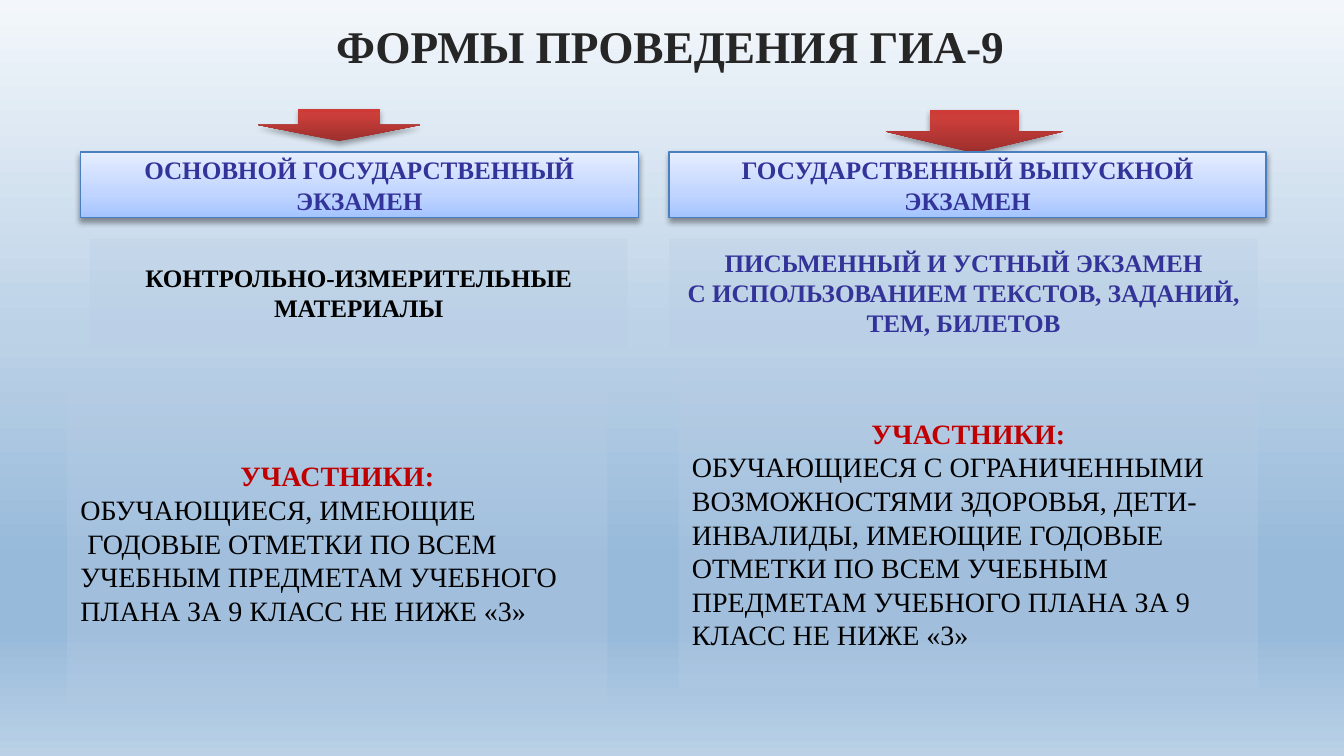
"""Build the slide on the forms of the GIA-9 exam."""
from pptx import Presentation
from pptx import util as u
from pptx.dml.color import RGBColor
from pptx.enum import shapes, text
from pptx.oxml import parse_xml
from pptx.oxml.ns import nsdecls, qn

FONT = "Times New Roman"
INK = RGBColor(0x26, 0x26, 0x26)
BLACK = RGBColor(0, 0, 0)
NAVY = RGBColor(0x33, 0x33, 0x99)
RED = RGBColor(0xC0, 0, 0)
EDGE = RGBColor(0x4B, 0x7E, 0xBC)
PANEL = RGBColor(0xB9, 0xCD, 0xE5)
SKY = [(0, RGBColor(0xF3, 0xF7, 0xFB)), (44, RGBColor(0xBC, 0xD2, 0xE7)),
       (74, RGBColor(0x97, 0xBA, 0xDA)), (83, RGBColor(0x97, 0xBA, 0xDA)),
       (100, RGBColor(0xBA, 0xD1, 0xE6))]
ARROW = [(0, RGBColor(0x9C, 0x2F, 0x2D)), (80, RGBColor(0xCB, 0x3E, 0x3A)),
         (100, RGBColor(0xCE, 0x3B, 0x37))]
HEADER = [(0, RGBColor(0xA4, 0xC4, 0xFF)), (35, RGBColor(0xBF, 0xD4, 0xFF)),
          (100, RGBColor(0xE6, 0xEE, 0xFF))]
CENTER, LEFT = text.PP_ALIGN.CENTER, text.PP_ALIGN.LEFT


def set_gradient(fill, element, stops, angle):
    fill.gradient()
    fill.gradient_angle = angle
    gs_list = element.find(".//" + qn("a:gsLst"))
    for gs in list(gs_list):
        gs_list.remove(gs)
    for pos, color in stops:
        gs_list.append(parse_xml(
            f'<a:gs {nsdecls("a")} pos="{pos * 1000}"><a:srgbClr val="{color}"/></a:gs>'))


def add_shadow(sp, alpha, dist):
    sp._element.spPr.find(qn("a:effectLst")).append(parse_xml(
        f'<a:outerShdw {nsdecls("a")} blurRad="{u.Pt(3.1)}" dist="{u.Pt(dist)}" '
        f'dir="5400000" rotWithShape="0"><a:srgbClr val="{BLACK}">'
        f'<a:alpha val="{alpha * 1000}"/></a:srgbClr></a:outerShdw>'))


def add_base(s, kind, box):
    sp = s.shapes.add_shape(kind, *map(u.Pt, box))
    sp.shadow.inherit = False
    sp.line.fill.background()
    return sp


def prepare_frame(sp):
    tf = sp.text_frame
    tf.word_wrap = True
    tf.vertical_anchor = text.MSO_ANCHOR.MIDDLE
    return tf


def add_line(tf, words, size=13.5, color=NAVY, bold=True, align=CENTER):
    p = tf.paragraphs[0]
    if p.runs:
        p = tf.add_paragraph()
    p.alignment = align
    r = p.add_run()
    r.text = words
    r.font.name, r.font.size, r.font.bold = FONT, u.Pt(size), bold
    r.font.color.rgb = color
    return p


def add_title(s, words):
    tf = prepare_frame(s.shapes.add_textbox(*map(u.Pt, (168, 8.6, 486, 34.6))))
    tf.margin_left = u.Pt(12)
    add_line(tf, words, size=24.3, color=INK, align=LEFT).line_spacing = 0.9


def add_arrow(s, box):
    sp = add_base(s, shapes.MSO_SHAPE.DOWN_ARROW, box)
    set_gradient(sp.fill, sp._element, ARROW, 90)
    add_shadow(sp, alpha=35, dist=1.8)


def add_header(s, box, words):
    sp = add_base(s, shapes.MSO_SHAPE.RECTANGLE, box)
    set_gradient(sp.fill, sp._element, HEADER, 90)
    sp.line.color.rgb = EDGE
    sp.line.width = u.Pt(0.75)
    add_shadow(sp, alpha=38, dist=1.6)
    add_line(prepare_frame(sp), words)


def add_panel(s, box):
    sp = add_base(s, shapes.MSO_SHAPE.RECTANGLE, box)
    sp.fill.solid()
    sp.fill.fore_color.rgb = PANEL
    sp._element.spPr.find(".//" + qn("a:srgbClr")).append(
        parse_xml(f'<a:alpha {nsdecls("a")} val="31000"/>'))
    return prepare_frame(sp)


def add_materials(s, box, lines, color):
    tf = add_panel(s, box)
    for words in lines:
        add_line(tf, words, color=color)


def add_participants(s, box, lines, margin_top=3.6):
    tf = add_panel(s, box)
    tf.margin_top = u.Pt(margin_top)
    add_line(tf, "УЧАСТНИКИ:", size=15, color=RED)
    for words in lines:
        add_line(tf, words, size=15, color=BLACK, bold=False, align=LEFT)


def main():
    prs = Presentation()
    prs.slide_width, prs.slide_height = u.Pt(720), u.Pt(405)
    s = prs.slides.add_slide(prs.slide_layouts[6])
    set_gradient(s.background.fill, s._element, SKY, 270)
    add_title(s, "ФОРМЫ ПРОВЕДЕНИЯ ГИА-9")

    add_arrow(s, (138.2, 58.3, 87.1, 17.3))
    add_header(s, (43, 81.5, 299, 35.2), "ОСНОВНОЙ ГОСУДАРСТВЕННЫЙ ЭКЗАМЕН")
    add_materials(s, (48.2, 128, 288, 57.6),
                  ["КОНТРОЛЬНО-ИЗМЕРИТЕЛЬНЫЕ МАТЕРИАЛЫ"], BLACK)
    add_participants(s, (36, 205.2, 289.4, 171.4), [
        "ОБУЧАЮЩИЕСЯ, ИМЕЮЩИЕ",
        " ГОДОВЫЕ ОТМЕТКИ ПО ВСЕМ УЧЕБНЫМ ПРЕДМЕТАМ УЧЕБНОГО "
        "ПЛАНА ЗА 9 КЛАСС НЕ НИЖЕ «3»"])

    add_arrow(s, (474.5, 59, 95, 23))
    add_header(s, (358.5, 81.5, 319.7, 35.2), "ГОСУДАРСТВЕННЫЙ ВЫПУСКНОЙ ЭКЗАМЕН")
    add_materials(s, (358.5, 128, 315.4, 57.6), [
        "ПИСЬМЕННЫЙ И УСТНЫЙ ЭКЗАМЕН",
        "С ИСПОЛЬЗОВАНИЕМ ТЕКСТОВ, ЗАДАНИЙ, ТЕМ, БИЛЕТОВ"], NAVY)
    add_participants(s, (363.6, 197.3, 310.3, 171.4), [
        "ОБУЧАЮЩИЕСЯ С ОГРАНИЧЕННЫМИ ВОЗМОЖНОСТЯМИ ЗДОРОВЬЯ, "
        "ДЕТИ-ИНВАЛИДЫ, ИМЕЮЩИЕ ГОДОВЫЕ ОТМЕТКИ ПО ВСЕМ УЧЕБНЫМ "
        "ПРЕДМЕТАМ УЧЕБНОГО ПЛАНА ЗА 9 КЛАСС НЕ НИЖЕ «3»"], margin_top=9.6)
    prs.save("out.pptx")


if __name__ == "__main__":
    main()
